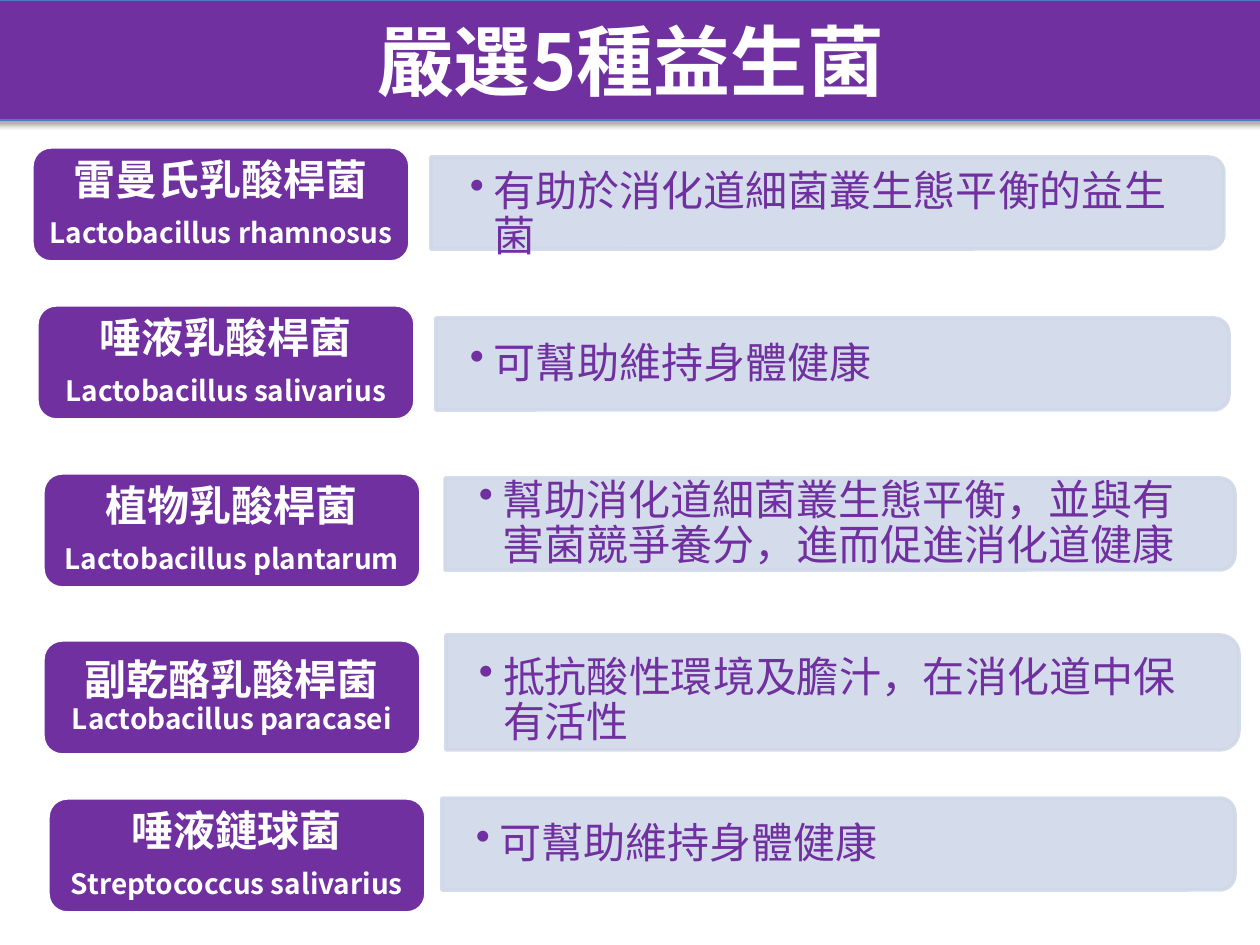
from dataclasses import dataclass
from typing import NamedTuple

from lxml.etree import SubElement
from pptx import Presentation
from pptx.dml.color import RGBColor
from pptx.enum.shapes import MSO_SHAPE as Preset
from pptx.enum.text import MSO_ANCHOR as Anchor, MSO_AUTO_SIZE as AutoSize, PP_ALIGN as Align
from pptx.oxml.ns import qn
from pptx.util import Pt

EMU_PER_PX = 914400 / 126


@dataclass(frozen=True)
class Theme:
    font: str = "Noto Sans CJK SC"
    purple: RGBColor = RGBColor(0x70, 0x30, 0xA0)
    white: RGBColor = RGBColor(0xFF, 0xFF, 0xFF)
    pale: RGBColor = RGBColor(0xD0, 0xD8, 0xE8)
    edge: RGBColor = RGBColor(0x4B, 0x7E, 0xBC)
    title: int = 44
    body: int = 24
    latin: int = 16


class Box(NamedTuple):
    left: int
    top: int
    width: int
    height: int

    def emu(self):
        return [px(value) for value in self]


class Strain(NamedTuple):
    label: Box
    panel: Box
    note: Box
    name: str
    latin: str
    benefit: str
    joined: bool = False


THEME = Theme()
STRAINS = [
    Strain(Box(32, 147, 378, 115), Box(431, 157, 793, 92), Box(436, 174, 788, 83),
           "雷曼氏乳酸桿菌", "Lactobacillus rhamnosus", "有助於消化道細菌叢生態平衡的益生菌"),
    Strain(Box(37, 305, 378, 115), Box(436, 318, 793, 92), Box(436, 323, 788, 83),
           "唾液乳酸桿菌", "Lactobacillus salivarius", "可幫助維持身體健康"),
    Strain(Box(43, 473, 378, 115), Box(445, 478, 790, 92), Box(445, 483, 784, 83),
           "植物乳酸桿菌", "Lactobacillus plantarum",
           "幫助消化道細菌叢生態平衡，並與有害菌競爭養分，進而促進消化道健康"),
    Strain(Box(43, 640, 378, 115), Box(446, 635, 793, 115), Box(445, 650, 788, 103),
           "副乾酪乳酸桿菌", "Lactobacillus paracasei",
           "抵抗酸性環境及膽汁，在消化道中保有活性", joined=True),
    Strain(Box(48, 798, 378, 115), Box(442, 798, 793, 92), Box(442, 803, 788, 83),
           "唾液鏈球菌", "Streptococcus salivarius", "可幫助維持身體健康"),
]


def px(value):
    return round(value * EMU_PER_PX)


def paint(shape, fill, line, width):
    shape.fill.solid()
    shape.fill.fore_color.rgb = fill
    shape.line.color.rgb = line
    shape.line.width = Pt(width)


def set_frame(frame, across, down):
    frame.word_wrap = True
    frame.auto_size = AutoSize.NONE
    frame.vertical_anchor = Anchor.MIDDLE
    frame.margin_left = frame.margin_right = px(across)
    frame.margin_top = frame.margin_bottom = px(down)


def set_para(para, size, color, bold=False, after=0.0):
    para.line_spacing = 0.9
    para.space_after = Pt(round(size * after, 1))
    para.font.size = Pt(size)
    para.font.bold = bold
    para.font.color.rgb = color
    para.font.name = THEME.font
    defaults = para._p.get_or_add_pPr().find(qn("a:defRPr"))
    SubElement(defaults, qn("a:ea"), typeface=THEME.font)


def add_title(page, box, text):
    title = page.shapes.title
    title.left, title.top, title.width, title.height = box.emu()
    paint(title, THEME.purple, THEME.edge, 0.75)
    effects = SubElement(title._element.spPr, qn("a:effectLst"))
    shadow = SubElement(effects, qn("a:outerShdw"), blurRad=str(Pt(3.1)),
                        dist=str(Pt(1.8)), dir="5400000", rotWithShape="0")
    black = SubElement(shadow, qn("a:srgbClr"), val="000000")
    SubElement(black, qn("a:alpha"), val="35000")
    set_frame(title.text_frame, 13, 6)
    para = title.text_frame.paragraphs[0]
    para.text = text
    para.alignment = Align.CENTER
    set_para(para, THEME.title, THEME.white, bold=True)
    para.line_spacing = 1.0


def add_label(page, box, name, latin, joined):
    label = page.shapes.add_shape(Preset.ROUNDED_RECTANGLE, *box.emu())
    label.shadow.inherit = False
    paint(label, THEME.purple, THEME.white, 2)
    frame = label.text_frame
    set_frame(frame, 9, 4)
    para = frame.paragraphs[0]
    para.add_run().text = name
    if joined:
        span = para.add_run()
        span.text = latin
        span.font.size = Pt(THEME.latin)
    else:
        frame.add_paragraph().text = latin
    for para, size in zip(frame.paragraphs, (THEME.body, THEME.latin)):
        para.alignment = Align.CENTER
        set_para(para, size, THEME.white, bold=True, after=0.35)


def add_panel(page, box):
    shift = (box.width - box.height) / 2
    upright = Box(box.left + shift, box.top - shift, box.height, box.width)
    panel = page.shapes.add_shape(Preset.ROUND_2_SAME_RECTANGLE, *upright.emu())
    panel.rotation = 90
    panel.shadow.inherit = False
    paint(panel, THEME.pale, THEME.pale, 2)
    for color in panel._element.spPr.iter(qn("a:srgbClr")):
        SubElement(color, qn("a:alpha"), val="90000")


def add_note(page, box, text):
    frame = page.shapes.add_textbox(*box.emu()).text_frame
    set_frame(frame, 34, 18)
    para = frame.paragraphs[0]
    para.text = text
    para.level = 1
    props = para._p.get_or_add_pPr()
    props.set("marL", str(px(24)))
    props.set("indent", str(px(-24)))
    para.line_spacing = 0.9
    para.space_after = Pt(3.6)
    SubElement(props, qn("a:buChar"), char="•")
    set_para(para, THEME.body, THEME.purple, after=0.15)


def main():
    deck = Presentation()
    deck.slide_width, deck.slide_height = px(1260), px(945)
    page = deck.slides.add_slide(deck.slide_layouts[5])
    add_title(page, Box(-31, 0, 1324, 120), "嚴選5種益生菌")
    for strain in STRAINS:
        add_label(page, strain.label, strain.name, strain.latin, strain.joined)
        add_panel(page, strain.panel)
        add_note(page, strain.note, strain.benefit)
    deck.save("out.pptx")


if __name__ == "__main__":
    main()
